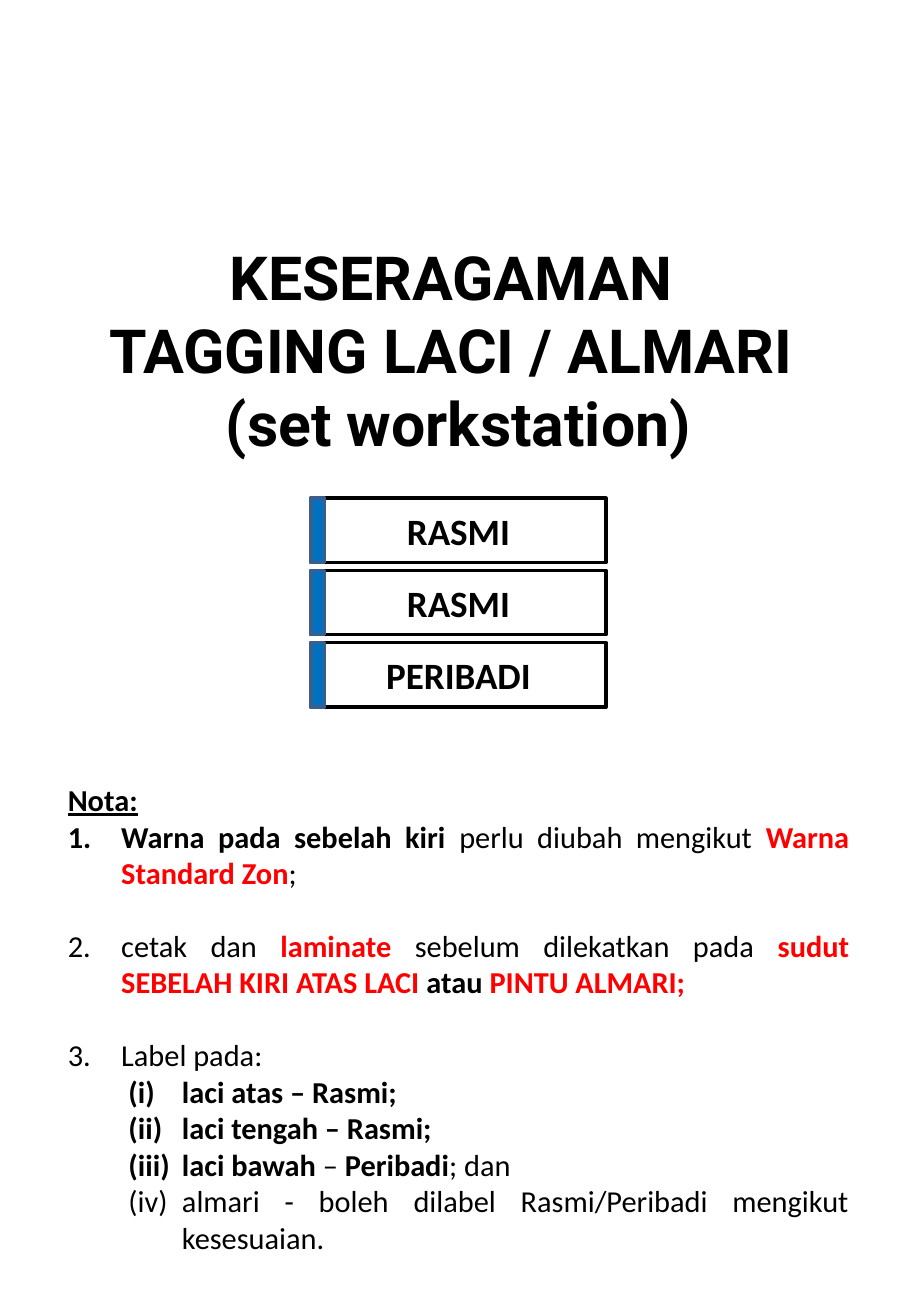
from dataclasses import dataclass

from lxml.etree import SubElement
from pptx import Presentation
from pptx.dml.color import RGBColor
from pptx.enum.shapes import MSO_SHAPE
from pptx.enum.text import MSO_ANCHOR, MSO_AUTO_SIZE, PP_ALIGN
from pptx.oxml.ns import qn
from pptx.shapes.autoshape import Shape
from pptx.slide import Slide
from pptx.util import Inches, Pt

BLACK = RGBColor(0x00, 0x00, 0x00)
RED = RGBColor(0xFF, 0x00, 0x00)
ZONE_BLUE = RGBColor(0x00, 0x70, 0xC0)
ZONE_EDGE = RGBColor(0x3A, 0x5F, 0x8C)
BODY_FONT = "Calibri"
TITLE_FONT = "Roboto"

TITLE_LINES = ["KESERAGAMAN ", "TAGGING LACI / ALMARI ", "(set workstation)"]
TAG_LABELS = ["RASMI", "RASMI", "PERIBADI"]
TAG_LEFT, TAG_TOP, TAG_PITCH = 2.56, 4.1, 0.595
TAG_WIDTH, TAG_HEIGHT, STRIPE_WIDTH = 2.43, 0.53, 0.11
HANGING_INDENT = 0.44


@dataclass(frozen=True)
class Span:
    text: str
    bold: bool = False
    color: RGBColor = BLACK


@dataclass(frozen=True)
class Note:
    spans: list[Span]
    level: int = 0
    space_before: float = 0


NOTES = [
    Note([Span("Warna pada sebelah kiri ", True), Span("perlu diubah mengikut "),
          Span("Warna Standard Zon", True, RED), Span(";")]),
    Note([Span("cetak dan "), Span("laminate", True, RED),
          Span(" sebelum dilekatkan pada "),
          Span("sudut SEBELAH KIRI ATAS LACI ", True, RED),
          Span("atau ", True), Span("PINTU ALMARI;", True, RED)], space_before=21.6),
    Note([Span("Label pada: ")], space_before=21.6),
    Note([Span("laci atas – Rasmi;", True)], level=1),
    Note([Span("laci tengah – Rasmi;", True)], level=1),
    Note([Span("laci bawah", True), Span(" – "), Span("Peribadi", True),
          Span("; dan")], level=1),
    Note([Span("almari - boleh dilabel Rasmi/Peribadi mengikut kesesuaian.")], level=1),
]


def add_span(para, span: Span, size: float, font: str = BODY_FONT):
    run = para.add_run()
    run.text = span.text
    run.font.name = font
    run.font.size = Pt(size)
    run.font.bold = span.bold
    run.font.color.rgb = span.color
    return run


def add_title(page: Slide) -> None:
    title = page.shapes.title
    title.left, title.top = Inches(0.4), Inches(2.04)
    title.width, title.height = Inches(6.75), Inches(1.67)
    frame = title.text_frame
    frame.auto_size = MSO_AUTO_SIZE.NONE
    frame.vertical_anchor = MSO_ANCHOR.MIDDLE
    para = frame.paragraphs[0]
    para.alignment = PP_ALIGN.CENTER
    for index, line in enumerate(TITLE_LINES):
        if index:
            para.add_line_break()
        add_span(para, Span(line, True), 36, TITLE_FONT)


def add_box(shapes, top: float, width: float, edge: RGBColor) -> Shape:
    box = shapes.add_shape(MSO_SHAPE.RECTANGLE, Inches(TAG_LEFT), Inches(top),
                           Inches(width), Inches(TAG_HEIGHT))
    box.shadow.inherit = False
    box.fill.background()
    box.line.color.rgb = edge
    box.line.width = Pt(2)
    return box


def add_tag(page: Slide, label: str, top: float) -> None:
    tag = page.shapes.add_group_shape()
    frame_box = add_box(tag.shapes, top, TAG_WIDTH, BLACK)
    frame_box.text_frame.vertical_anchor = MSO_ANCHOR.MIDDLE
    para = frame_box.text_frame.paragraphs[0]
    para.alignment = PP_ALIGN.CENTER
    add_span(para, Span(label, True), 22)
    stripe = add_box(tag.shapes, top, STRIPE_WIDTH, ZONE_EDGE)
    stripe.fill.solid()
    stripe.fill.fore_color.rgb = ZONE_BLUE


def number_paragraph(para, level: int) -> None:
    properties = para._p.get_or_add_pPr()
    indent = Inches(HANGING_INDENT)
    properties.set("marL", str(indent + level * Inches(0.5)))
    properties.set("indent", str(-indent))
    scheme = "romanLcParenBoth" if level else "arabicPeriod"
    SubElement(properties, qn("a:buFont"), typeface="+mj-lt")
    SubElement(properties, qn("a:buAutoNum"), type=scheme)


def add_notes(page: Slide) -> None:
    box = page.shapes.add_textbox(Inches(0.46), Inches(6.23), Inches(6.63), Inches(4.19))
    frame = box.text_frame
    frame.word_wrap = True
    frame.auto_size = MSO_AUTO_SIZE.SHAPE_TO_FIT_TEXT
    heading = frame.paragraphs[0]
    heading.line_spacing = 1.5
    add_span(heading, Span("Nota:", True), 18).font.underline = True
    for note in NOTES:
        para = frame.add_paragraph()
        para.alignment = PP_ALIGN.JUSTIFY
        para.level = note.level
        para.space_before = Pt(note.space_before)
        number_paragraph(para, note.level)
        for span in note.spans:
            add_span(para, span, 18)


def main() -> None:
    deck = Presentation()
    deck.slide_width, deck.slide_height = Inches(7.5), Inches(10.83)
    page = deck.slides.add_slide(deck.slide_layouts[5])

    # Drawer tags
    for index, label in enumerate(TAG_LABELS):
        add_tag(page, label, TAG_TOP + index * TAG_PITCH)

    # Notes and heading
    add_notes(page)
    add_title(page)
    deck.save("out.pptx")


if __name__ == "__main__":
    main()
